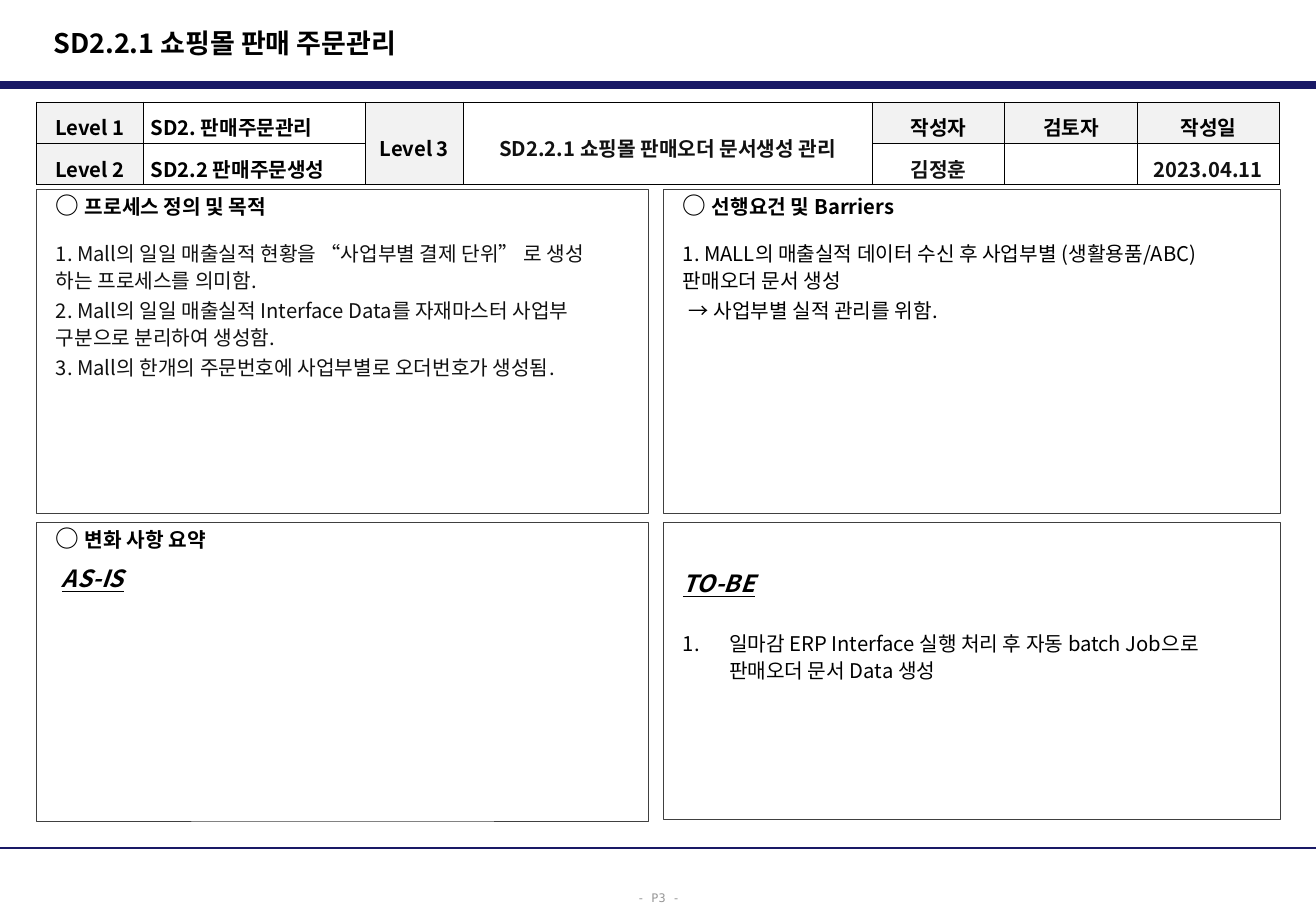
"""Build the process definition slide for shopping mall sales orders."""
from dataclasses import dataclass

from lxml.etree import SubElement
from pptx import Presentation
from pptx.dml.color import RGBColor
from pptx.enum.shapes import MSO_CONNECTOR as Conn, MSO_SHAPE as Shape
from pptx.enum.text import MSO_ANCHOR as Anchor, PP_ALIGN as Align
from pptx.oxml.ns import qn
from pptx.util import Pt

PX = 9144
WIDE, HIGH = 1083, 750
SANS, MONO = "Noto Sans CJK KR", "DejaVu Sans Mono"
BLACK, INK, NAVY, GRAY = "000000", "111111", "191966", "404040"
PALE, MUTE = "F2F2F2", "969696"
TIGHT, LOOSE = 0.85, 1.09


@dataclass
class Rule:
    y: int
    width: float


@dataclass
class Para:
    text: str
    gap: float = 2.4
    lead: float = LOOSE
    left: int = 0
    color: str = BLACK
    tag: bool = False
    num: bool = False


@dataclass
class Panel:
    x: int
    y: int
    w: int
    h: int
    head: str
    body: list[Para]
    top: int = 5


@dataclass
class Cell:
    row: int
    col: int
    text: str
    fill: str = ""
    color: str = BLACK
    span: int = 1
    align: Align = Align.CENTER


RULES = [Rule(70, 4.5), Rule(698, 1.5)]
PANELS = [
    Panel(30, 156, 504, 267, "프로세스 정의 및 목적", [
        Para("1. Mall의 일일 매출실적 현황을 “사업부별 결제 단위” 로 생성\v하는 프로세스를 의미함.",
             gap=11.7, color=INK),
        Para("2. Mall의 일일 매출실적 Interface Data를 자재마스터 사업부 구분으로 분리하여 생성함.", color=INK),
        Para("3. Mall의 한개의 주문번호에 사업부별로 오더번호가 생성됨.", color=INK)]),
    Panel(546, 156, 508, 267, "선행요건 및 Barriers", [
        Para("1. MALL의 매출실적 데이터 수신 후 사업부별 (생활용품/ABC) 판매오더 문서 생성", gap=11.7),
        Para("→ 사업부별 실적 관리를 위함.", left=5)]),
    Panel(30, 430, 504, 246, "변화 사항 요약", [
        Para("AS-IS", gap=9.7, lead=TIGHT, left=5, tag=True)]),
    Panel(546, 430, 508, 245, "", [
        Para("TO-BE", gap=0, lead=TIGHT, tag=True),
        Para("일마감 ERP Interface 실행 처리 후 자동 batch Job으로 판매오더 문서 Data 생성",
             gap=19, left=38, num=True)], top=42),
]
COLS = [88, 183, 80, 337, 109, 109, 117]
ROWS = [34, 34]
CELLS = [
    Cell(0, 0, "Level 1", PALE),
    Cell(0, 1, "SD2. 판매주문관리", align=Align.LEFT),
    Cell(0, 2, "Level 3", PALE, span=2),
    Cell(0, 3, "SD2.2.1 쇼핑몰 판매오더 문서생성 관리", color=INK, span=2),
    Cell(0, 4, "작성자", PALE),
    Cell(0, 5, "검토자", PALE),
    Cell(0, 6, "작성일", PALE),
    Cell(1, 0, "Level 2", PALE),
    Cell(1, 1, "SD2.2 판매주문생성", align=Align.LEFT),
    Cell(1, 4, "김정훈", color=INK),
    Cell(1, 5, ""),
    Cell(1, 6, "2023.04.11", color=INK),
]


def px(*nums: int) -> list[int]:
    return [num * PX for num in nums]


def paint(form, color: str) -> None:
    form.rgb = RGBColor.from_string(color)


def write(para, text: str, size: float = 12, color: str = BLACK, face: str = SANS,
          bold: bool = False, slant: bool = False) -> None:
    for i, part in enumerate(text.split("\v")):
        if i:
            para.add_line_break()
        run = para.add_run()
        run.text = part
        font = run.font
        font.size, font.name, font.bold = Pt(size), face, bold
        font.italic = font.underline = slant
        paint(font.color, color)
        SubElement(run._r.get_or_add_rPr(), qn("a:ea"), typeface=face)


def draw_rule(slide, rule: Rule) -> None:
    line = slide.shapes.add_connector(Conn.STRAIGHT, *px(0, rule.y, WIDE, rule.y))
    line.line.width = Pt(rule.width)
    paint(line.line.color, NAVY)
    SubElement(line._element.spPr, qn("a:effectLst"))


def draw_para(para, item: Para, first: bool) -> None:
    para.alignment = Align.LEFT
    para.line_spacing = item.lead
    para.space_before = Pt(0 if first else item.gap)
    prop = para._p.get_or_add_pPr()
    prop.set("marL", str(item.left * PX))
    prop.set("indent", str(-item.left * PX if item.num else 0))
    if item.num:
        SubElement(prop, qn("a:buFont"), typeface=SANS)
        SubElement(prop, qn("a:buAutoNum"), type="arabicPeriod")
    write(para, item.text, size=14 if item.tag else 12, color=item.color,
          bold=item.tag, slant=item.tag)


def draw_panel(slide, panel: Panel) -> None:
    box = slide.shapes.add_shape(Shape.RECTANGLE, *px(panel.x, panel.y, panel.w, panel.h))
    box.shadow.inherit = False
    box.fill.background()
    box.line.width = Pt(0.5)
    paint(box.line.color, GRAY)
    frame = box.text_frame
    frame.word_wrap, frame.vertical_anchor = True, Anchor.TOP
    frame.margin_left, frame.margin_top, frame.margin_right, frame.margin_bottom = px(16, panel.top, 10, 5)
    para = frame.paragraphs[0]
    if panel.head:
        para.alignment, para.line_spacing = Align.LEFT, TIGHT
        write(para, "○ ", size=14, bold=True)
        write(para, panel.head, bold=True)
    for i, item in enumerate(panel.body):
        first = i == 0 and not panel.head
        draw_para(para if first else frame.add_paragraph(), item, first)


def edge(cell) -> None:
    prop = cell._tc.get_or_add_tcPr()
    for i, side in enumerate(("a:lnL", "a:lnR", "a:lnT", "a:lnB")):
        line = SubElement(prop, qn(side), w=str(Pt(0.5)))
        SubElement(SubElement(line, qn("a:solidFill")), qn("a:srgbClr"), val=BLACK)
        prop.insert(i, line)


def draw_table(slide) -> None:
    table = slide.shapes.add_table(len(ROWS), len(COLS), *px(30, 84, sum(COLS), sum(ROWS))).table
    table.first_row = table.horz_banding = False
    for col, wide in zip(table.columns, COLS):
        col.width = wide * PX
    for row, high in zip(table.rows, ROWS):
        row.height = high * PX
    for cell in table.iter_cells():
        cell.fill.background()
        edge(cell)
    for item in CELLS:
        cell = table.cell(item.row, item.col)
        if item.span > 1:
            cell.merge(table.cell(item.row + item.span - 1, item.col))
        cell.vertical_anchor = Anchor.MIDDLE
        cell.margin_left, cell.margin_top, cell.margin_right, cell.margin_bottom = px(6, 1, 6, 1)
        if item.fill:
            cell.fill.solid()
            paint(cell.fill.fore_color, item.fill)
        if item.text:
            para = cell.text_frame.paragraphs[0]
            para.alignment, para.line_spacing = item.align, 1.3
            write(para, item.text, color=item.color, bold=True)


def draw_title(slide) -> None:
    title = slide.shapes.title
    title.left, title.top, title.width, title.height = px(34, 16, 711, 38)
    title.text_frame.vertical_anchor = Anchor.MIDDLE
    para = title.text_frame.paragraphs[0]
    para.alignment = Align.LEFT
    write(para, "SD2.2.1 쇼핑몰 판매 주문관리", size=16, bold=True)


def draw_foot(slide) -> None:
    frame = slide.shapes.add_textbox(*px(514, 725, 56, 25)).text_frame
    frame.word_wrap = False
    para = frame.paragraphs[0]
    para.alignment, para.line_spacing = Align.CENTER, 1.3
    write(para, "- P3 -", size=7, color=MUTE, face=MONO)


def main() -> None:
    deck = Presentation()
    deck.slide_width, deck.slide_height = px(WIDE, HIGH)
    slide = deck.slides.add_slide(deck.slide_layouts[5])
    for rule in RULES:
        draw_rule(slide, rule)
    draw_foot(slide)
    for panel in PANELS:
        draw_panel(slide, panel)
    draw_title(slide)
    draw_table(slide)
    deck.save("out.pptx")


if __name__ == "__main__":
    main()
